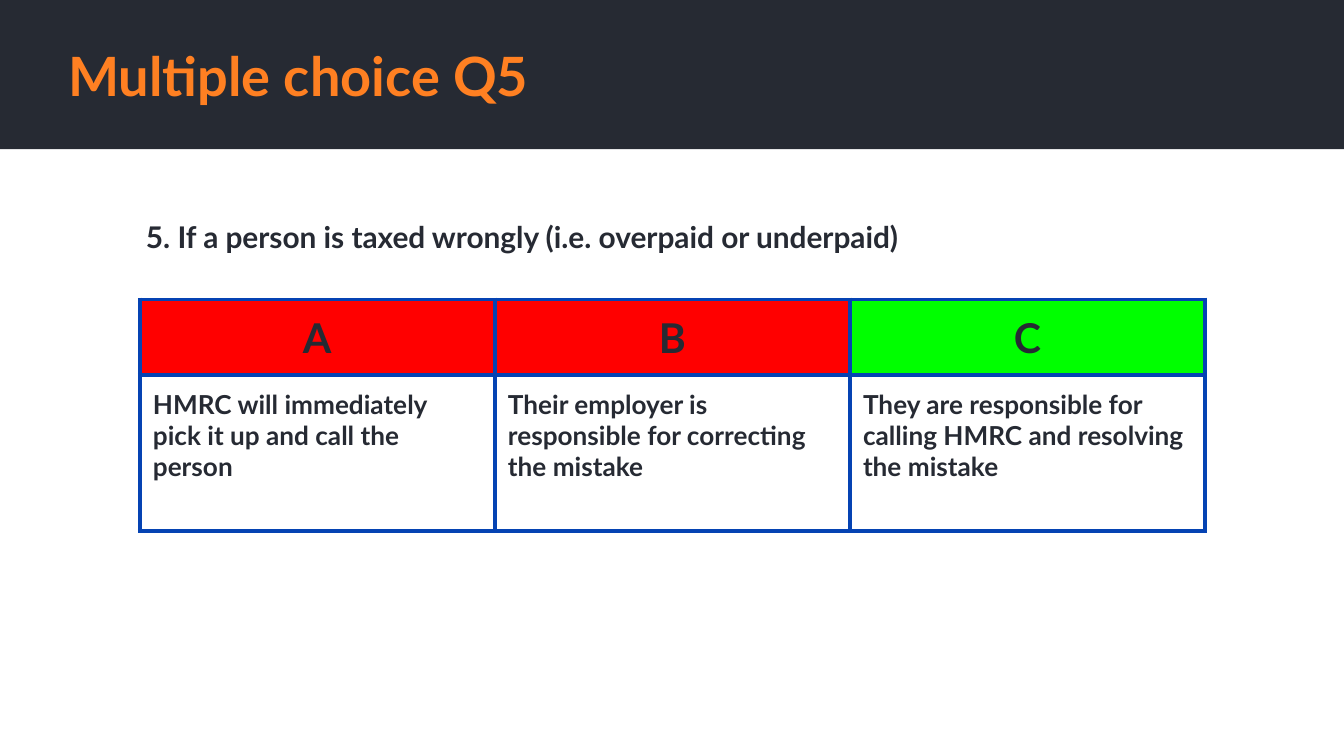
from dataclasses import dataclass

from lxml.etree import SubElement
from pptx import Presentation
from pptx.dml.color import RGBColor
from pptx.enum.shapes import MSO_SHAPE
from pptx.enum.text import MSO_ANCHOR, PP_ALIGN
from pptx.oxml.ns import qn
from pptx.util import Cm, Pt


@dataclass(frozen=True)
class Theme:
    font: str = "Lato"
    dark: str = "262A33"
    accent: str = "FF8022"
    border: str = "0543B3"
    wrong: str = "FF0000"
    right: str = "00FF00"
    title_size: float = 29
    letter_size: float = 22
    question_size: float = 16
    answer_size: float = 14
    border_width: float = 2.25
    inset: float = 0.25


class QuizSlide:
    def __init__(self, slide, theme):
        self.slide = slide
        self.theme = theme

    def apply(self, target, formats):
        for name, value in formats.items():
            setattr(target, name, value)

    def insets(self):
        return {f"margin_{side}": Cm(self.theme.inset)
                for side in ("left", "top", "right", "bottom")}

    def add_words(self, paragraph, text, size, color, align=PP_ALIGN.LEFT):
        paragraph.alignment = align
        run = paragraph.add_run()
        run.text = text
        self.apply(run.font, {"name": self.theme.font, "size": Pt(size), "bold": True})
        run.font.color.rgb = RGBColor.from_string(color)

    def banner(self, width, height):
        band = self.slide.shapes.add_shape(MSO_SHAPE.RECTANGLE, 0, 0, width, height)
        band.shadow.inherit = False
        band.fill.solid()
        band.fill.fore_color.rgb = RGBColor.from_string(self.theme.dark)
        band.line.fill.background()

    def text(self, text, box, size, color, anchor=MSO_ANCHOR.TOP):
        frame = self.slide.shapes.add_textbox(*map(Cm, box)).text_frame
        self.apply(frame, {"word_wrap": True, "vertical_anchor": anchor, **self.insets()})
        self.add_words(frame.paragraphs[0], text, size, color)

    def outline(self, cell):
        properties = cell._tc.get_or_add_tcPr()
        for edge in ("a:lnL", "a:lnR", "a:lnT", "a:lnB"):
            line = SubElement(properties, qn(edge), w=str(Pt(self.theme.border_width)))
            fill = SubElement(line, qn("a:solidFill"))
            SubElement(fill, qn("a:srgbClr"), val=self.theme.border)

    def cell(self, cell, text, size, align, fill=None):
        self.apply(cell, self.insets())
        self.outline(cell)
        if fill:
            cell.fill.solid()
            cell.fill.fore_color.rgb = RGBColor.from_string(fill)
        else:
            cell.fill.background()
        self.add_words(cell.text_frame.paragraphs[0], text, size, self.theme.dark, align)

    def answers(self, options, correct, left, top, column_width, row_heights):
        table = self.slide.shapes.add_table(
            len(row_heights), len(options), Cm(left), Cm(top),
            Cm(column_width * len(options)), Cm(sum(row_heights))).table
        self.apply(table, {"first_row": False, "horz_banding": False})
        for row, height in zip(table.rows, row_heights):
            row.height = Cm(height)
        for index, (letter, answer) in enumerate(options.items()):
            table.columns[index].width = Cm(column_width)
            mark = self.theme.right if letter == correct else self.theme.wrong
            self.cell(table.cell(0, index), letter, self.theme.letter_size,
                      PP_ALIGN.CENTER, mark)
            self.cell(table.cell(1, index), answer, self.theme.answer_size, PP_ALIGN.LEFT)


def main():
    theme = Theme()
    deck = Presentation()
    deck.slide_width, deck.slide_height = Cm(25.4), Cm(14.29)
    quiz = QuizSlide(deck.slides.add_slide(deck.slide_layouts[6]), theme)

    # Title banner
    quiz.banner(deck.slide_width, Cm(2.82))
    quiz.text("Multiple choice Q5", (1.04, 0.71, 22.2, 1.42),
              theme.title_size, theme.accent, MSO_ANCHOR.MIDDLE)

    # Answer options
    options = {
        "A": "HMRC will immediately pick it up and call the person",
        "B": "Their employer is responsible for correcting the mistake",
        "C": "They are responsible for calling HMRC and resolving the mistake",
    }
    quiz.answers(options, correct="C", left=2.64, top=5.66,
                 column_width=6.71, row_heights=(1.43, 2.95))

    # Question
    quiz.text("5. If a person is taxed wrongly (i.e. overpaid or underpaid)",
              (2.51, 3.89, 21.29, 1.19), theme.question_size, theme.dark)

    deck.save("out.pptx")


if __name__ == "__main__":
    main()
